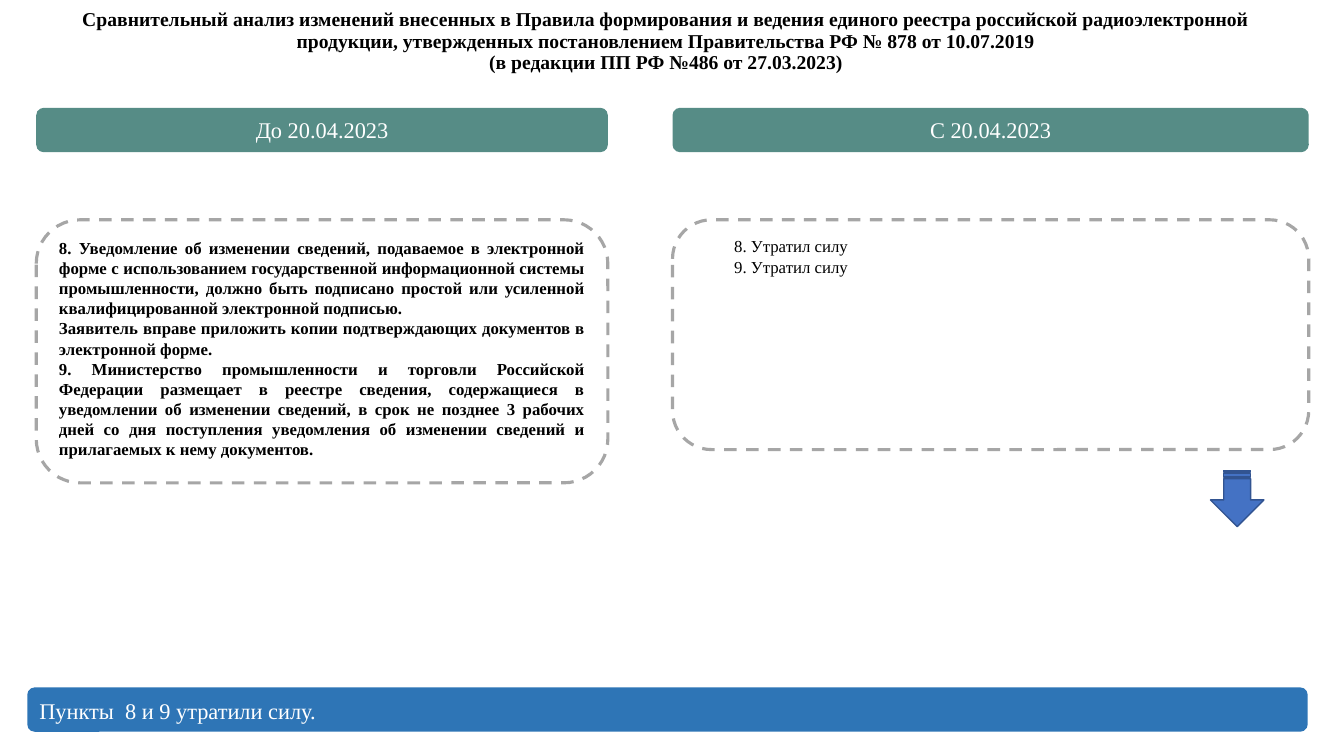
from dataclasses import dataclass

from pptx import Presentation, util as u
from pptx.dml.color import RGBColor
from pptx.enum import dml, shapes, text

COLORS = {
    "ink": "000000",
    "paper": "FFFFFF",
    "heading": "568C86",
    "frame": "A6A6A6",
    "arrow": "4472C4",
    "arrow_edge": "325491",
    "conclusion": "2E75B6",
}
FONT = "Times New Roman"
WIDTH, HEIGHT = u.Inches(13.33), u.Inches(7.5)
LEFT_COLUMN, RIGHT_COLUMN = (2.7, 42.53), (50.04, 47.34)
HEADING_ROW, BAR_HEIGHT, RULES_ROW = 14.27, 5.87, 29.07


@dataclass(frozen=True)
class Area:
    """Position and size in percent of the slide."""
    left: float
    top: float
    width: float
    height: float

    def emu(self) -> tuple[int, int, int, int]:
        return (round(self.left * WIDTH / 100), round(self.top * HEIGHT / 100),
                round(self.width * WIDTH / 100), round(self.height * HEIGHT / 100))


@dataclass(frozen=True)
class Style:
    size: float
    color: str = "ink"
    bold: bool = False
    align: text.PP_ALIGN = text.PP_ALIGN.JUSTIFY
    anchor: text.MSO_ANCHOR = text.MSO_ANCHOR.TOP
    spacing: float = 1.0
    indent: float = 0.0


@dataclass(frozen=True)
class Panel:
    area: Area
    paragraphs: tuple[str, ...]
    style: Style
    fill: str | None = None
    outline: str | None = None
    corner: float = 0.1667


def rgb(name: str) -> RGBColor:
    return RGBColor.from_string(COLORS[name])


def write(frame, paragraphs: tuple[str, ...], style: Style) -> None:
    frame.word_wrap = True
    frame.auto_size = text.MSO_AUTO_SIZE.NONE
    frame.vertical_anchor = style.anchor
    for index, wording in enumerate(paragraphs):
        paragraph = frame.add_paragraph() if index else frame.paragraphs[0]
        paragraph.alignment = style.align
        paragraph.line_spacing = style.spacing
        paragraph.space_before = paragraph.space_after = u.Pt(0)
        if style.indent:
            paragraph._p.get_or_add_pPr().set("indent", str(u.Inches(style.indent)))
        run = paragraph.add_run()
        run.text = wording
        run.font.name = FONT
        run.font.size = u.Pt(style.size)
        run.font.bold = style.bold
        run.font.color.rgb = rgb(style.color)


def draw_panel(slide, panel: Panel) -> None:
    box = slide.shapes.add_shape(shapes.MSO_SHAPE.ROUNDED_RECTANGLE, *panel.area.emu())
    box.shadow.inherit = False
    box.adjustments[0] = panel.corner
    if panel.fill:
        box.fill.solid()
        box.fill.fore_color.rgb = rgb(panel.fill)
    else:
        box.fill.background()
    if panel.outline:
        box.line.color.rgb = rgb(panel.outline)
        box.line.width = u.Pt(2.25)
        box.line.dash_style = dml.MSO_LINE.DASH
    else:
        box.line.fill.background()
    write(box.text_frame, panel.paragraphs, panel.style)


def draw_arrow(slide, area: Area) -> None:
    arrow = slide.shapes.add_shape(shapes.MSO_SHAPE.STRIPED_RIGHT_ARROW, *area.emu())
    arrow.rotation = 90
    arrow.shadow.inherit = False
    arrow.fill.solid()
    arrow.fill.fore_color.rgb = rgb("arrow")
    arrow.line.color.rgb = rgb("arrow_edge")
    arrow.line.width = u.Pt(1)


def draw_title(slide, area: Area, paragraphs: tuple[str, ...], style: Style) -> None:
    title = slide.shapes.title
    title.left, title.top, title.width, title.height = area.emu()
    write(title.text_frame, paragraphs, style)


def column_area(column: tuple[float, float], top: float, height: float) -> Area:
    left, width = column
    return Area(left, top, width, height)


TITLE = (
    "Сравнительный анализ изменений внесенных в Правила формирования и ведения "
    "единого реестра российской радиоэлектронной продукции, утвержденных "
    "постановлением Правительства РФ № 878 от 10.07.2019",
    "(в редакции ПП РФ №486 от 27.03.2023)",
)
OLD_RULES = (
    "8. Уведомление об изменении сведений, подаваемое в электронной форме с "
    "использованием государственной информационной системы промышленности, должно "
    "быть подписано простой или усиленной квалифицированной электронной подписью.",
    "Заявитель вправе приложить копии подтверждающих документов в электронной форме.",
    "9. Министерство промышленности и торговли Российской Федерации размещает в "
    "реестре сведения, содержащиеся в уведомлении об изменении сведений, в срок не "
    "позднее 3 рабочих дней со дня поступления уведомления об изменении сведений и "
    "прилагаемых к нему документов.",
)
NEW_RULES = ("8. Утратил силу", "9. Утратил силу")

TITLE_STYLE = Style(14, bold=True, align=text.PP_ALIGN.CENTER,
                    anchor=text.MSO_ANCHOR.BOTTOM, spacing=0.9)
HEADING_STYLE = Style(16, "paper", align=text.PP_ALIGN.CENTER,
                      anchor=text.MSO_ANCHOR.MIDDLE)
CONCLUSION_STYLE = Style(16, "paper", anchor=text.MSO_ANCHOR.MIDDLE, spacing=1.07)

COMPARISON = (
    Panel(column_area(LEFT_COLUMN, RULES_ROW, 34.8), OLD_RULES,
          Style(12, bold=True), outline="frame"),
    Panel(column_area(RIGHT_COLUMN, RULES_ROW, 30.4), NEW_RULES,
          Style(12, indent=0.4), outline="frame", corner=0.17),
    Panel(column_area(LEFT_COLUMN, HEADING_ROW, BAR_HEIGHT), ("До 20.04.2023",),
          HEADING_STYLE, fill="heading"),
    Panel(column_area(RIGHT_COLUMN, HEADING_ROW, BAR_HEIGHT), ("С 20.04.2023",),
          HEADING_STYLE, fill="heading"),
)
CONCLUSION = Panel(Area(2.03, 90.93, 95.27, BAR_HEIGHT),
                   ("Пункты  8 и 9 утратили силу.",), CONCLUSION_STYLE, fill="conclusion")


def main() -> None:
    deck = Presentation()
    deck.slide_width, deck.slide_height = WIDTH, HEIGHT
    slide = deck.slides.add_slide(deck.slide_layouts.get_by_name("Title Only"))
    draw_title(slide, Area(2.03, 0.93, 95.05, 9.47), TITLE, TITLE_STYLE)
    for panel in COMPARISON:
        draw_panel(slide, panel)
    draw_arrow(slide, Area(89.95, 62.4, 4.2, 7.07))
    draw_panel(slide, CONCLUSION)
    deck.save("out.pptx")


if __name__ == "__main__":
    main()
